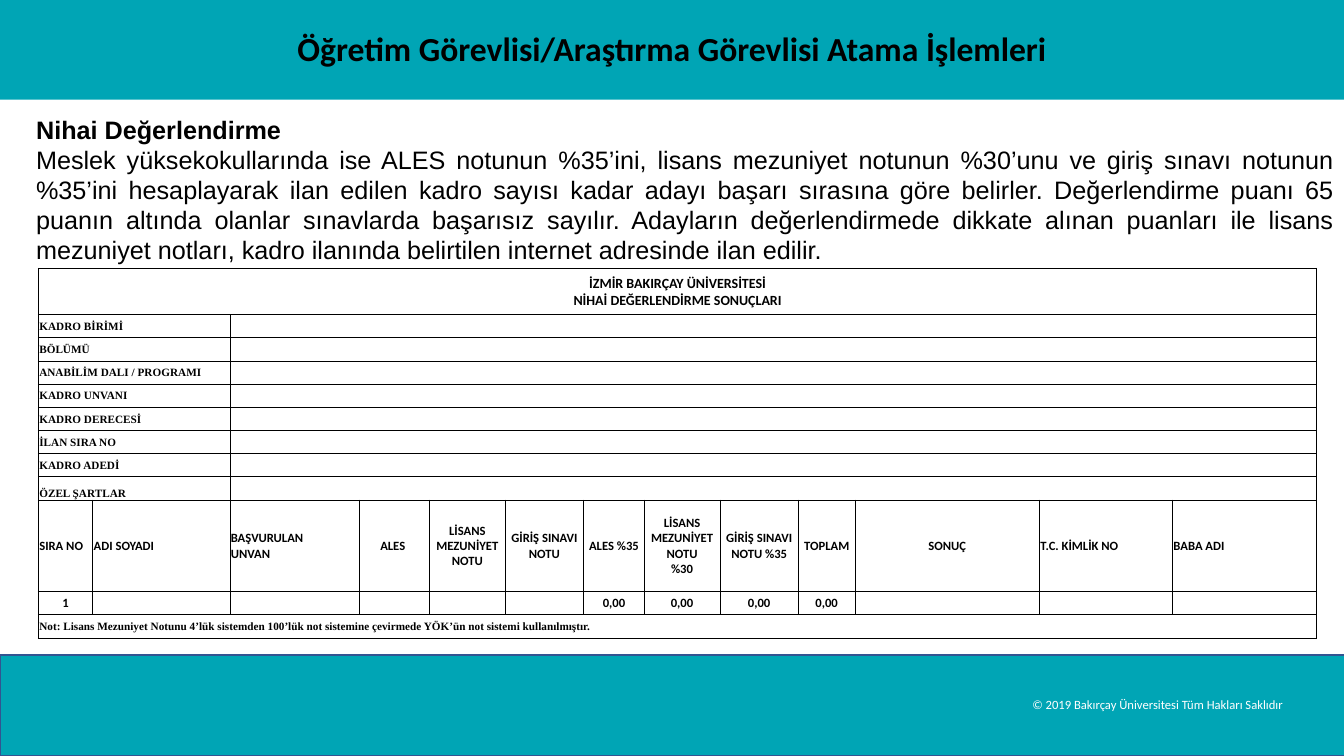
"""Builds the final evaluation slide with its results form."""
from lxml import etree
from pptx import Presentation
from pptx.dml.color import RGBColor
from pptx.enum.shapes import MSO_SHAPE
from pptx.enum.text import MSO_ANCHOR as ANCHOR, MSO_AUTO_SIZE as AUTO, PP_ALIGN as ALIGN
from pptx.oxml.ns import qn
from pptx.util import Inches, Pt

TITLE = "Öğretim Görevlisi/Araştırma Görevlisi Atama İşlemleri"
HEADING = "Nihai Değerlendirme"
BODY = (
    "Meslek yüksekokullarında ise ALES notunun %35’ini, lisans mezuniyet notunun %30’unu "
    "ve giriş sınavı notunun %35’ini hesaplayarak ilan edilen kadro sayısı kadar adayı başarı "
    "sırasına göre belirler. Değerlendirme puanı 65 puanın altında olanlar sınavlarda başarısız "
    "sayılır. Adayların değerlendirmede dikkate alınan puanları ile lisans mezuniyet notları, "
    "kadro ilanında belirtilen internet adresinde ilan edilir."
)
FOOTER = "© 2019 Bakırçay Üniversitesi Tüm Hakları Saklıdır"
FORM_TITLE = "İZMİR BAKIRÇAY ÜNİVERSİTESİ\vNİHAİ DEĞERLENDİRME SONUÇLARI"
FIELDS = ["KADRO BİRİMİ", "BÖLÜMÜ", "ANABİLİM DALI / PROGRAMI", "KADRO UNVANI",
          "KADRO DERECESİ", "İLAN SIRA NO", "KADRO ADEDİ", "ÖZEL ŞARTLAR"]
COLUMNS = [
    ("SIRA NO", 0.54, "1"), ("ADI SOYADI", 1.36, ""), ("BAŞVURULAN \vUNVAN", 1.28, ""),
    ("ALES ", 0.7, ""), ("LİSANS MEZUNİYET NOTU", 0.75, ""), ("GİRİŞ SINAVI NOTU", 0.78, ""),
    ("ALES %35", 0.6, "0,00"), ("LİSANS MEZUNİYET NOTU\v%30", 0.75, "0,00"),
    ("GİRİŞ SINAVI NOTU %35", 0.78, "0,00"), ("TOPLAM", 0.56, "0,00"),
    ("SONUÇ", 1.83, ""), ("T.C. KİMLİK NO", 1.32, ""), ("BABA ADI", 1.43, ""),
]
LEFT_HEADERS = {0, 1, 2, 11, 12}
NOTE = ("Not: Lisans Mezuniyet Notunu 4’lük sistemden 100’lük not sistemine çevirmede "
        "YÖK’ün not sistemi kullanılmıştır.")
TEAL, NAVY, BLACK, WHITE = "00A5B5", "325491", "000000", "FFFFFF"
SERIF = "Times New Roman"


def rgb(value):
    return RGBColor.from_string(value)


def style(p, size, font, color=BLACK, bold=False, align=ALIGN.LEFT):
    p.alignment = align
    for r in p.runs:
        r.font.size, r.font.name, r.font.bold = Pt(size), font, bold
        r.font.color.rgb = rgb(color)


def add_band(slide, top, line=None):
    sp = slide.shapes.add_shape(MSO_SHAPE.RECTANGLE, 0, Inches(top), Inches(13.35), Inches(1))
    sp.shadow.inherit = False
    sp.fill.solid()
    sp.fill.fore_color.rgb = rgb(TEAL)
    if line:
        sp.line.color.rgb = rgb(line)
        sp.line.width = Pt(1)
    else:
        sp.line.fill.background()


def add_text(slide, box, text, wrap=True):
    tf = slide.shapes.add_textbox(*map(Inches, box)).text_frame
    tf.word_wrap = wrap
    tf.text = text
    return tf


def add_borders(cell):
    tc_pr = cell._tc.get_or_add_tcPr()
    for side in ("lnL", "lnR", "lnT", "lnB"):
        ln = etree.SubElement(tc_pr, qn(f"a:{side}"), w=str(Pt(0.5)))
        fill = etree.SubElement(ln, qn("a:solidFill"))
        etree.SubElement(fill, qn("a:srgbClr"), val=BLACK)


def write(cell, text, size=9, font="Calibri", align=ALIGN.LEFT, anchor=ANCHOR.MIDDLE):
    cell.text = text
    cell.vertical_anchor = anchor
    style(cell.text_frame.paragraphs[0], size, font, bold=True, align=align)


def add_form(slide):
    heights = [0.46] + [0.23] * len(FIELDS) + [0.91, 0.23, 0.23]
    widths = [width for _, width, _ in COLUMNS]
    last, header = len(widths) - 1, len(FIELDS) + 1
    table = slide.shapes.add_table(len(heights), len(widths), Inches(0.38), Inches(2.66),
                                   Inches(sum(widths)), Inches(sum(heights))).table
    table.first_row = table.horz_banding = False
    for col, width in zip(table.columns, widths):
        col.width = Inches(width)
    for row, height in zip(table.rows, heights):
        row.height = Inches(height)
    for cell in table.iter_cells():
        cell.margin_left = cell.margin_right = cell.margin_top = Inches(0.01)
        cell.margin_bottom = 0
        add_borders(cell)
        cell.fill.background()

    write(table.cell(0, 0), FORM_TITLE, 10, align=ALIGN.CENTER)
    for i, field in enumerate(FIELDS, 1):
        anchor = ANCHOR.BOTTOM if i == len(FIELDS) else ANCHOR.MIDDLE
        write(table.cell(i, 0), field, 8, SERIF, anchor=anchor)
        table.cell(i, 0).merge(table.cell(i, 1))
        table.cell(i, 2).merge(table.cell(i, last))
    for j, (label, _, value) in enumerate(COLUMNS):
        align = ALIGN.LEFT if j in LEFT_HEADERS else ALIGN.CENTER
        write(table.cell(header, j), label, align=align)
        write(table.cell(header + 1, j), value, align=ALIGN.CENTER)
    write(table.cell(header + 2, 0), NOTE, 8, SERIF)
    for i in (0, header + 2):
        table.cell(i, 0).merge(table.cell(i, last))
    for cell in table.iter_cells():
        if not cell.text:
            p = cell.text_frame.paragraphs[0]
            etree.SubElement(p._p, qn("a:endParaRPr"), sz="800")


def main():
    prs = Presentation()
    prs.slide_width, prs.slide_height = Inches(13.33), Inches(7.5)
    slide = prs.slides.add_slide(prs.slide_layouts[6])
    add_band(slide, 6.5, NAVY)
    add_band(slide, -0.01)

    tf = add_text(slide, (9.14, 6.88, 3.74, 0.24), FOOTER, wrap=False)
    tf.auto_size = AUTO.SHAPE_TO_FIT_TEXT
    p = tf.paragraphs[0]
    p._p.get_or_add_pPr().set("marL", str(Inches(1)))
    p.line_spacing = 0.9
    style(p, 9, "Calibri", WHITE)

    tf = add_text(slide, (0, 0.23, 13.33, 0.5), TITLE)
    tf.auto_size = AUTO.SHAPE_TO_FIT_TEXT
    style(tf.paragraphs[0], 24, "Calibri", bold=True, align=ALIGN.CENTER)

    tf = add_text(slide, (0.26, 1.08, 13.07, 4.69), f"{HEADING}\n{BODY}")
    for p, bold in zip(tf.paragraphs, (True, False)):
        style(p, 18, "Arial", bold=bold, align=ALIGN.JUSTIFY)

    add_form(slide)
    prs.save("out.pptx")


if __name__ == "__main__":
    main()
